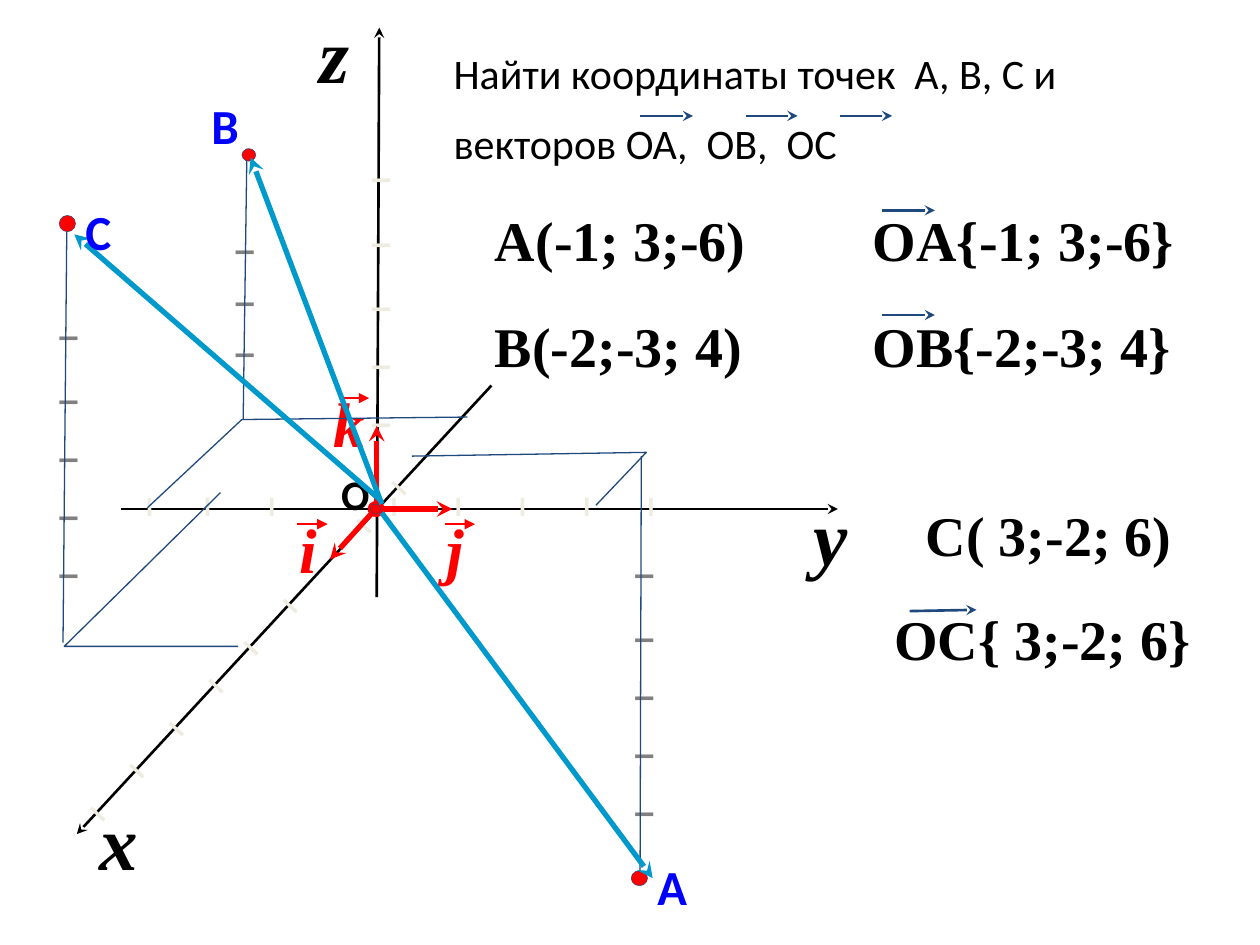
from itertools import accumulate

from lxml.etree import SubElement
from pptx import Presentation
from pptx.dml.color import RGBColor
from pptx.enum.shapes import MSO_CONNECTOR as CONN, MSO_SHAPE as SHAPE
from pptx.enum.text import MSO_ANCHOR as ANCHOR, MSO_AUTO_SIZE as AUTO, PP_ALIGN as ALIGN
from pptx.oxml.ns import qn
from pptx.util import Inches, Pt

COLORS = {
    "ink": "000000", "guide": "1F497D", "basis": "FF0000", "vector": "0099CC",
    "point": "0000FF", "axis_tick": "EEECE1", "guide_tick": "808080",
}
SANS, SERIF = "Calibri", "Times New Roman"

# Content
TASK = ["Найти координаты точек  А, В, С и", "векторов ОА,  ОВ,  ОС"]
ANSWERS = [  # text, left, top, width
    ("A(-1; 3;-6)", 3.83, 1.58, 2.75),
    ("B(-2;-3; 4)", 3.83, 2.42, 2.5),
    ("OA{-1; 3;-6}", 6.83, 1.58, 2.75),
    ("OB{-2;-3; 4}", 6.83, 2.42, 2.92),
    ("C( 3;-2; 6)", 7.25, 3.92, 2.5),
    ("OC{ 3;-2; 6}", 7, 4.75, 3.33),
]
VECTOR_MARKS = [  # small arrows above vector names
    ((5.08, 0.92), (5.5, 0.92)), ((5.92, 0.92), (6.33, 0.92)),
    ((6.67, 0.92), (7.08, 0.92)), ((7, 1.67), (7.42, 1.67)),
    ((7, 2.5), (7.42, 2.5)), ((7.22, 4.85), (7.75, 4.84)),
]
AXES = [  # name, label left, top, width, start, end
    ("x", 0.69, 6.25, 0.51, (3.9, 3.06), (0.61, 6.62)),
    ("y", 6.36, 3.83, 0.47, (0.96, 4.04), (6.65, 4.04)),
    ("z", 2.44, 0, 0.44, (2.99, 4.74), (3.01, 0.22)),
]
TICKS = [  # left, top, width, rotation, colour, gaps between ticks
    (1.06, 3.83, 5.42, 0, "axis_tick", [0.46, 0.51, 0.97, 0.51, 0.51, 0.51, 0.51]),
    (1.51, 1.82, 3, 270, "axis_tick", [0.46, 0.46, 0.51, 0.51]),
    (-0.07, 4.65, 4.67, 312.8, "axis_tick", [0.46, 0.46, 0.46, 0.41, 0.46, 0.86, 0.41]),
    (1.18, 2.02, 1.5, 270, "guide_tick", [0.41, 0.41]),
    (3.52, 4.83, 3.16, 270, "guide_tick", [0.46, 0.46, 0.46, 0.51]),
    (-1.05, 2.94, 3.16, 270, "guide_tick", [0.46, 0.46, 0.46, 0.51]),
]
BASIS = [  # name, label left, top, start, end
    ("j", 3.28, 4, (2.99, 4.04), (3.59, 4.04)),
    ("k", 2.44, 3, (2.99, 4.04), (2.99, 3.38)),
    ("i", 2.11, 4, (2.98, 4.04), (2.62, 4.44)),
]
GUIDES = [
    [(1.17, 4.03), (1.92, 3.33), (3.71, 3.31)],
    [(1.93, 3.33), (1.96, 1.18)],
    [(3.27, 3.62), (5.13, 3.59), (4.73, 4.01)],
    [(5.09, 3.62), (5.08, 6.95)],
    [(1.75, 3.91), (0.51, 5.13), (1.89, 5.13)],
    [(0.53, 1.84), (0.5, 5.1)],
]
POINTS = [  # name, label left, top, dot box, vector start, end
    ("В", 1.58, 0.71, (1.92, 1.18, 0.11, 0.1), (3.03, 4), (1.99, 1.25)),
    ("А", 5.12, 6.75, (5.01, 6.91, 0.13, 0.12), (3.03, 4.07), (5.18, 6.97)),
    ("С", 0.58, 1.55, (0.47, 1.71, 0.13, 0.13), (3.02, 3.97), (0.59, 1.86)),
]
ORIGIN_DOT = (2.94, 4, 0.08, 0.08)


def rgb(name):
    return RGBColor.from_string(COLORS[name])


def add_run(p, text, size, font, color, bold=True, italic=False):
    r = p.add_run()
    r.text = text
    f = r.font
    f.size, f.name, f.bold, f.italic = Pt(size), font, bold, italic
    f.color.rgb = rgb(color)


def add_text(text, box, size, font, color, italic=False, wrap=True, align=ALIGN.LEFT):
    tb = shapes.add_textbox(*map(Inches, box))
    tb.text_frame.word_wrap = wrap
    p = tb.text_frame.paragraphs[0]
    p.alignment = align
    add_run(p, text, size, font, color, italic=italic)
    return tb


def add_ticks(left, top, width, rotation, color, gaps):
    tb = add_text("\t".join("I" * (len(gaps) + 1)), (left, top, width, 0.37), 16, SANS, color)
    tb.rotation = rotation
    tabs = SubElement(tb.text_frame.paragraphs[0]._p.get_or_add_pPr(), qn("a:tabLst"))
    for pos in accumulate(gaps):
        SubElement(tabs, qn("a:tab"), pos=str(Inches(pos)), algn="l")


def add_line(start, end, color, width, tail=None, head=None):
    c = shapes.add_connector(CONN.STRAIGHT, *map(Inches, start + end))
    c.line.color.rgb, c.line.width = rgb(color), Pt(width)
    ln = c.line._get_or_add_ln()
    for tag, kind in (("a:headEnd", head), ("a:tailEnd", tail)):
        if kind:
            SubElement(ln, qn(tag), type=kind)
    SubElement(c._element.spPr, qn("a:effectLst"))


def add_guide(points):
    if len(points) == 2:
        add_line(*points, "guide", 0.75)
        return
    start, *rest = [tuple(map(Inches, pt)) for pt in points]
    fb = shapes.build_freeform(*start)
    fb.add_line_segments(rest, close=False)
    sp = fb.convert_to_shape()
    sp.shadow.inherit = False
    sp.fill.background()
    sp.line.color.rgb, sp.line.width = rgb("guide"), Pt(0.75)


def add_dot(box):
    sp = shapes.add_shape(SHAPE.OVAL, *map(Inches, box))
    sp.shadow.inherit = False
    sp.fill.solid()
    sp.fill.fore_color.rgb = rgb("basis")
    sp.line.color.rgb, sp.line.width = rgb("guide"), Pt(0.25)


prs = Presentation()
prs.slide_width, prs.slide_height = Inches(10), Inches(7.5)
s = prs.slides.add_slide(prs.slide_layouts[5])
shapes = s.shapes

# Task in the title
title = shapes.title
title.left, title.top, title.width, title.height = map(Inches, (3.5, 0.33, 6.08, 1.05))
tf = title.text_frame
tf.word_wrap, tf.auto_size, tf.vertical_anchor = True, AUTO.NONE, ANCHOR.TOP
for n, line in enumerate(TASK):
    p = tf.add_paragraph() if n else tf.paragraphs[0]
    p.alignment = ALIGN.LEFT
    p.space_before = Pt(11 * n)
    add_run(p, line, 24, SANS, "ink", bold=False)

# Answers
for text, left, top, width in ANSWERS:
    add_text(text, (left, top, width, 0.63), 32, SERIF, "ink")
for start, end in VECTOR_MARKS:
    add_line(start, end, "guide", 1.5, "stealth")

# Axes with ticks
for name, left, top, width, start, end in AXES:
    add_line(start, end, "ink", 1.5, "stealth")
    add_text(name, (left, top, width, 0.83), 44, SERIF, "ink", italic=True, wrap=False)
for tick_row in TICKS:
    add_ticks(*tick_row)

# Unit vectors, each named with an arrow above
for name, left, top, start, end in BASIS:
    add_line(start, end, "basis", 3, "stealth", "oval")
    add_text(name, (left, top, 0.67, 0.7), 36, SERIF, "basis", italic=True, align=ALIGN.CENTER)
    add_line((left + 0.25, top + 0.16), (left + 0.49, top + 0.16), "basis", 1.5, "triangle")
add_dot(ORIGIN_DOT)
add_text("O", (2.61, 3.67, 0.63, 0.5), 24, SANS, "ink")

# Projections, then points with their vectors
for guide in GUIDES:
    add_guide(guide)
for name, left, top, dot, start, end in POINTS:
    add_dot(dot)
    add_line(start, end, "vector", 3, "stealth")
    add_text(name, (left, top, 0.63, 0.57), 28, SANS, "point")

prs.save("out.pptx")
